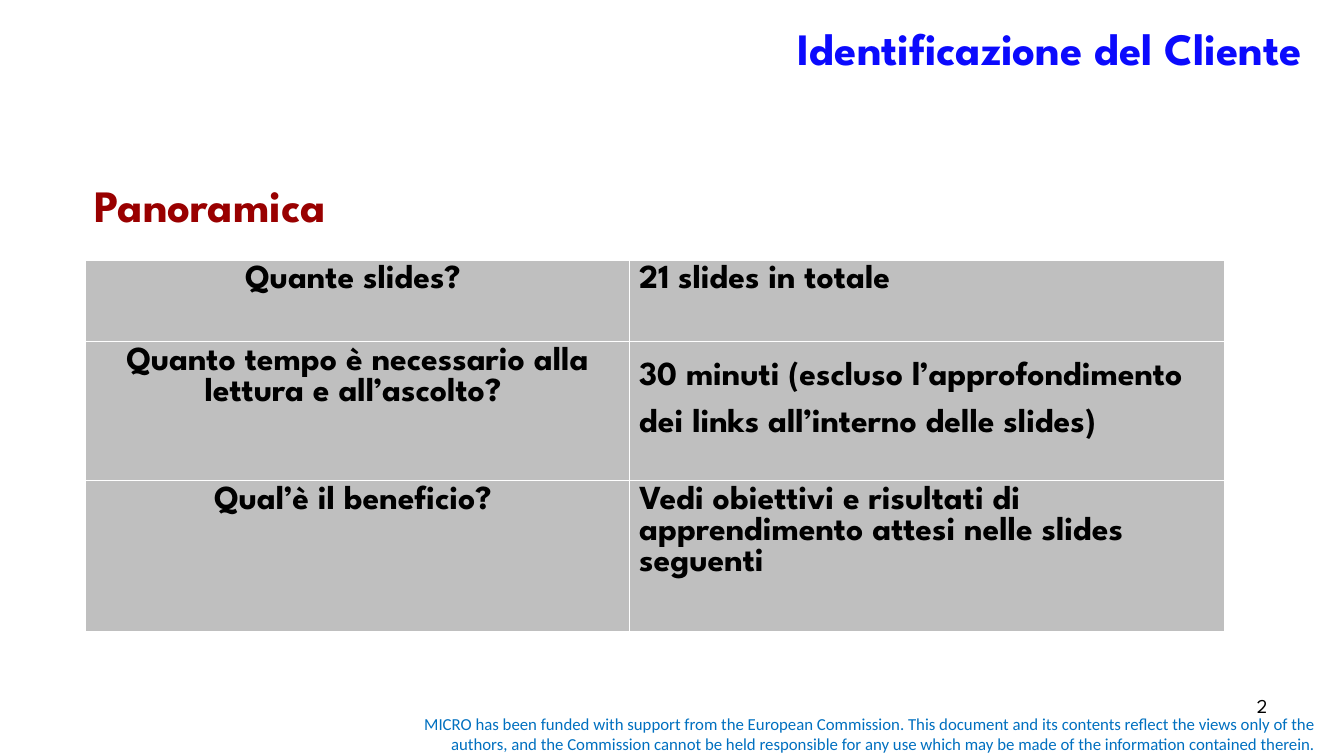
"""Build the client identification overview slide."""
from dataclasses import dataclass

from lxml.etree import SubElement as Sub
from pptx import Presentation
from pptx.dml.color import RGBColor as Rgb
from pptx.enum.text import MSO_ANCHOR as Anchor, MSO_AUTO_SIZE as Fit, PP_ALIGN as Align
from pptx.oxml.ns import qn
from pptx.util import Inches, Pt

HUES = {"title": "0B0AFD", "head": "990000", "note": "0070C0",
        "text": "000000", "cell": "BFBFBF", "rule": "FFFFFF"}
SPARTAN = "League Spartan"


@dataclass
class Label:
    """Text with its place and look."""
    text: str
    box: tuple
    hue: str
    size: int
    face: str = SPARTAN
    bold: bool = False
    align: Align = Align.RIGHT
    anchor: Anchor = Anchor.TOP
    top: float = 0.05


@dataclass
class Row:
    """One question with its answer."""
    ask: str
    reply: str
    high: float
    gap: float = 1.0


TITLE = Label("Identificazione del Cliente ", (1.14, 0, 12, 1.25), "title", 32,
              bold=True, top=0.21)
LABELS = [
    Label("MICRO has been funded with support from the European Commission. "
          "This document and its contents reflect the views only of the authors, "
          "and the Commission cannot be held responsible for any use which may be "
          "made of the information contained therein.",
          (3.75, 7.03, 9.4, 0.5), "note", 12, "Calibri", anchor=Anchor.MIDDLE),
    Label("2", (9.56, 6.83, 3.11, 0.52), "text", 14),
    Label("Panoramica", (0.84, 1.71, 2.9, 0.64), "head", 32, bold=True, align=Align.LEFT),
]
ROWS = [
    Row("Quante slides? ", "21 slides in totale", 0.81),
    Row("Quanto tempo è necessario alla lettura e all’ascolto? ",
        "30 minuti (escluso l’approfondimento dei links all’interno delle slides)", 1.38, 1.5),
    Row("Qual’è il beneficio? ",
        "Vedi obiettivi e risultati di apprendimento attesi nelle slides seguenti", 1.5),
]
COLS = (5.39, 5.91)


def apply(item, form: dict) -> None:
    """Set each format value on the item."""
    for name, value in form.items():
        setattr(item, name, value)


def write(frame, text: str, hue: str, size: int, face: str, bold: bool, align: Align) -> None:
    """Fill a text frame with one formatted paragraph."""
    frame.text = text
    para = frame.paragraphs[0]
    para.alignment = align
    font = para.runs[0].font
    apply(font, {"name": face, "size": Pt(size), "bold": bold})
    font.color.rgb = Rgb.from_string(HUES[hue])


def place(shape, label: Label) -> None:
    """Move a shape and give it the label's text."""
    sides = ("left", "top", "width", "height")
    apply(shape, dict(zip(sides, map(Inches, label.box))))
    frame = shape.text_frame
    apply(frame, {"word_wrap": True, "auto_size": Fit.NONE,
                  "vertical_anchor": label.anchor, "margin_top": Inches(label.top)})
    write(frame, label.text, label.hue, label.size, label.face, label.bold, label.align)


def edge(cell) -> None:
    """Draw thin lines on all four sides of a cell."""
    props = cell._tc.get_or_add_tcPr()
    for side in "LRTB":
        line = Sub(props, qn(f"a:ln{side}"), w=str(Pt(1)))
        Sub(Sub(line, qn("a:solidFill")), qn("a:srgbClr"), val=HUES["rule"])


def grid(slide) -> None:
    """Add the table of questions and answers."""
    high = sum(row.high for row in ROWS)
    area = map(Inches, (0.85, 2.58, sum(COLS), high))
    table = slide.shapes.add_table(len(ROWS), len(COLS), *area).table
    apply(table, {"first_row": False, "horz_banding": False})
    for col, wide in zip(table.columns, COLS):
        col.width = Inches(wide)
    for line, row in zip(table.rows, ROWS):
        line.height = Inches(row.high)
        texts = ((row.ask, Align.CENTER, 1.0), (row.reply, Align.LEFT, row.gap))
        for cell, (text, align, gap) in zip(line.cells, texts):
            edge(cell)
            cell.fill.solid()
            cell.fill.fore_color.rgb = Rgb.from_string(HUES["cell"])
            write(cell.text_frame, text, "text", 24, SPARTAN, True, align)
            cell.text_frame.paragraphs[0].line_spacing = gap


def main() -> None:
    """Build and save the deck."""
    deck = Presentation()
    apply(deck, {"slide_width": Inches(13.33), "slide_height": Inches(7.5)})
    slide = deck.slides.add_slide(deck.slide_layouts[5])
    place(slide.shapes.title, TITLE)
    grid(slide)
    for label in LABELS:
        place(slide.shapes.add_textbox(0, 0, 0, 0), label)
    deck.save("out.pptx")


if __name__ == "__main__":
    main()
